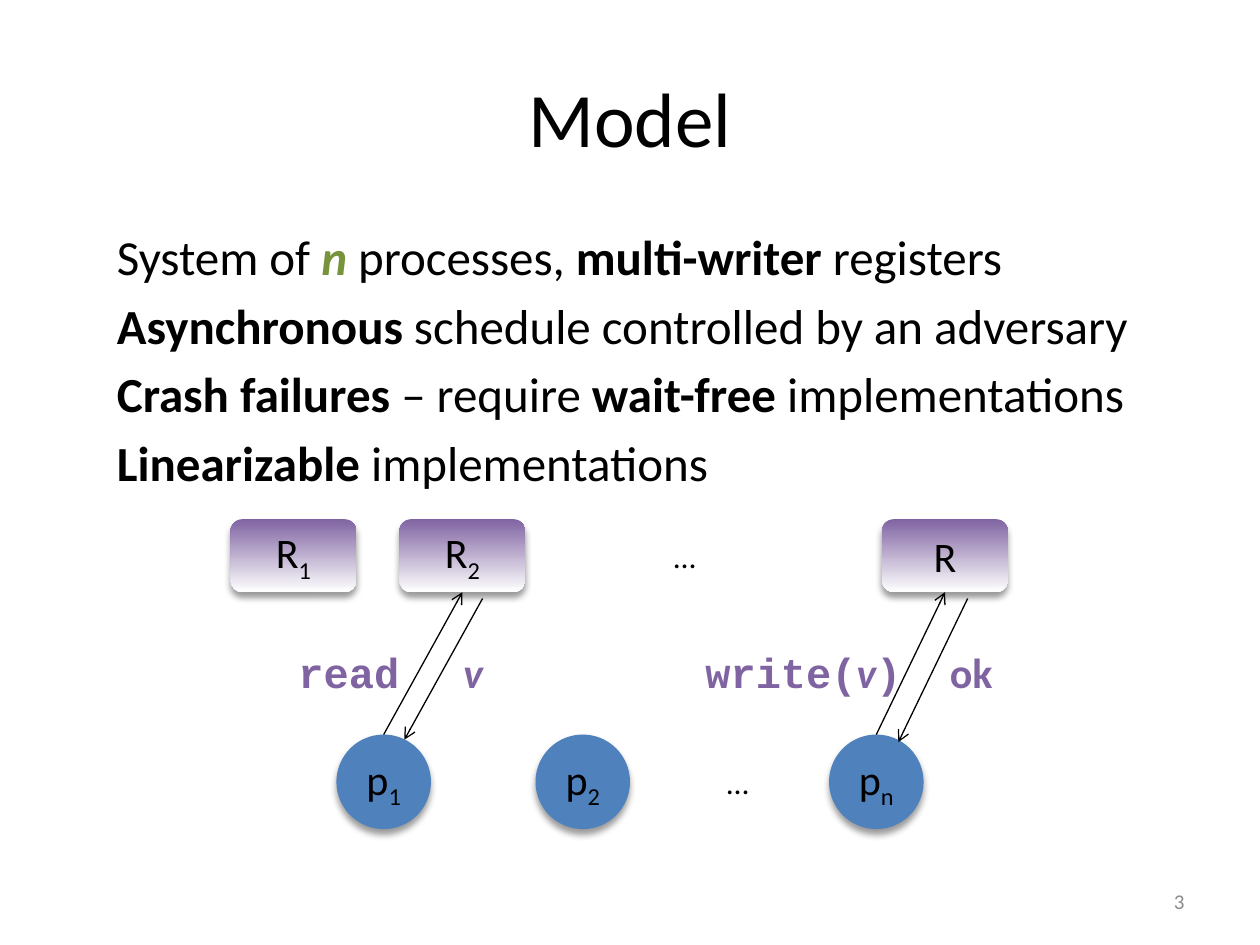
from lxml.etree import SubElement
from pptx import Presentation
from pptx.dml.color import RGBColor
from pptx.enum.shapes import MSO_CONNECTOR, MSO_SHAPE
from pptx.enum.text import MSO_ANCHOR, PP_ALIGN
from pptx.oxml.ns import qn
from pptx.util import Inches, Pt

COLORS = {
    "text": "000000",
    "process": "4F81BD",
    "register": "8064A2",
    "fade": "FFFFFF",
    "variable": "77933C",
    "number": "8C8C8C",
}
BOLD = {"bold": True}
VARIABLE = {"bold": True, "italic": True, "color": "variable"}
VALUE = {"italic": True, "name": "Calibri"}

STATEMENTS = [
    [("System of ", {}), ("n ", VARIABLE), ("processes, ", {}),
     ("multi-writer", BOLD), (" registers", {})],
    [("Asynchronous", BOLD), (" schedule controlled by an adversary", {})],
    [("Crash failures ", BOLD), ("– require ", {}), ("wait-free", BOLD),
     (" implementations", {})],
    [("Linearizable ", BOLD), ("implementations", {})],
]


def rgb(name):
    return RGBColor.from_string(COLORS[name])


def style_font(font, size=None, name=None, color=None, bold=None, italic=None):
    if size:
        font.size = Pt(size)
    if name:
        font.name = name
    if color:
        font.color.rgb = rgb(color)
    if bold is not None:
        font.bold = bold
    if italic is not None:
        font.italic = italic


def write(paragraph, runs, size, color="text", name="Calibri", bold=None):
    style_font(paragraph.font, size, name, color, bold)
    for text, style in runs:
        run = paragraph.add_run()
        run.text = text
        style_font(run.font, **style)


def add_label(slide, box, runs, size, align=PP_ALIGN.LEFT, wrap=False, **style):
    label = slide.shapes.add_textbox(*map(Inches, box))
    label.text_frame.word_wrap = wrap
    paragraph = label.text_frame.paragraphs[0]
    paragraph.alignment = align
    write(paragraph, runs, size, **style)
    return label


def add_statements(slide):
    body = slide.shapes.add_textbox(
        Inches(0.83), Inches(1.75), Inches(8.67), Inches(2.3))
    frame = body.text_frame
    frame.word_wrap = True
    for index, runs in enumerate(STATEMENTS):
        paragraph = frame.add_paragraph() if index else frame.paragraphs[0]
        paragraph.space_before = Pt(5.6)
        write(paragraph, runs, 28)


def add_shadow(shape):
    shape.shadow.inherit = False
    effects = shape.element.spPr.find(qn("a:effectLst"))
    shadow = SubElement(effects, qn("a:outerShdw"), blurRad=str(Pt(4)),
                        dist=str(Pt(3)), dir="5400000", rotWithShape="0")
    shade = SubElement(shadow, qn("a:srgbClr"), val=COLORS["text"])
    SubElement(shade, qn("a:alpha"), val="40000")


def add_node(slide, kind, box, letter, index):
    node = slide.shapes.add_shape(kind, *map(Inches, box))
    node.line.fill.background()
    add_shadow(node)
    node.text_frame.vertical_anchor = MSO_ANCHOR.MIDDLE
    paragraph = node.text_frame.paragraphs[0]
    paragraph.alignment = PP_ALIGN.CENTER
    write(paragraph, [(letter, {})], 24)
    if index:
        subscript = paragraph.add_run()
        subscript.text = index
        subscript.font._element.set("baseline", "-25000")
    return node


def add_process(slide, left, index):
    process = add_node(slide, MSO_SHAPE.OVAL, (left, 5.83, 0.75, 0.75), "p", index)
    process.fill.solid()
    process.fill.fore_color.rgb = rgb("process")
    return process


def add_register(slide, left, index):
    register = add_node(
        slide, MSO_SHAPE.ROUNDED_RECTANGLE, (left, 4.12, 1, 0.58), "R", index)
    register.fill.gradient()
    register.fill.gradient_angle = 270
    for stop, color in zip(register.fill.gradient_stops, ("register", "fade")):
        stop.color.rgb = rgb(color)
        stop.position = 0 if color == "register" else 1
    return register


def add_arrow(slide, start=(0, 0), end=(0, 0)):
    arrow = slide.shapes.add_connector(
        MSO_CONNECTOR.STRAIGHT, *map(Inches, (*start, *end)))
    arrow.line.color.rgb = rgb("text")
    arrow.line.width = Pt(0.75)
    properties = arrow.element.spPr
    SubElement(properties.find(qn("a:ln")), qn("a:tailEnd"), type="arrow")
    SubElement(properties, qn("a:effectLst"))
    return arrow


def add_exchange(slide, process, register, reply_start, reply_end):
    request = add_arrow(slide)
    request.begin_connect(process, 0)
    request.end_connect(register, 2)
    add_arrow(slide, reply_start, reply_end)


def main():
    presentation = Presentation()
    presentation.slide_width = Inches(10)
    presentation.slide_height = Inches(7.5)
    slide = presentation.slides.add_slide(presentation.slide_layouts[5])

    title = slide.shapes.title
    title.left, title.top = Inches(0.5), Inches(0.3)
    title.width, title.height = Inches(9), Inches(1.25)
    title.text_frame.vertical_anchor = MSO_ANCHOR.MIDDLE
    heading = title.text_frame.paragraphs[0]
    heading.alignment = PP_ALIGN.CENTER
    write(heading, [("Model", {})], 44)

    add_statements(slide)

    first, _, last = [add_process(slide, left, index) for left, index in
                      ((2.67, "1"), (4.25, "2"), (6.58, "n"))]
    _, read_register, write_register = [
        add_register(slide, left, index) for left, index in
        ((1.83, "1"), (3.17, "2"), (7, ""))]
    add_exchange(slide, first, read_register, (3.83, 4.75), (3.21, 5.87))
    add_exchange(slide, last, write_register, (7.68, 4.75), (7.13, 5.89))

    for left, top in ((5.25, 4.21), (5.67, 6.01)):
        add_label(slide, (left, top, 0.45, 0.4), [("…", {})], 18)

    operations = [
        (2.27, 1.01, "Courier New", [("read", {})]),
        (3.58, 0.44, "Calibri", [("v", {"italic": True})]),
        (5.5, 1.77, "Courier New", [("write(", {}), ("v", VALUE), (")", {})]),
        (7.44, 0.54, "Calibri", [("ok", {})]),
    ]
    for left, width, name, runs in operations:
        add_label(slide, (left, 5.08, width, 0.5), runs, 24,
                  color="register", name=name, bold=True)

    number = add_label(slide, (7.17, 6.95, 2.33, 0.4), [("3", {})], 12,
                       PP_ALIGN.RIGHT, wrap=True, color="number")
    number.text_frame.vertical_anchor = MSO_ANCHOR.MIDDLE

    presentation.save("out.pptx")


if __name__ == "__main__":
    main()
